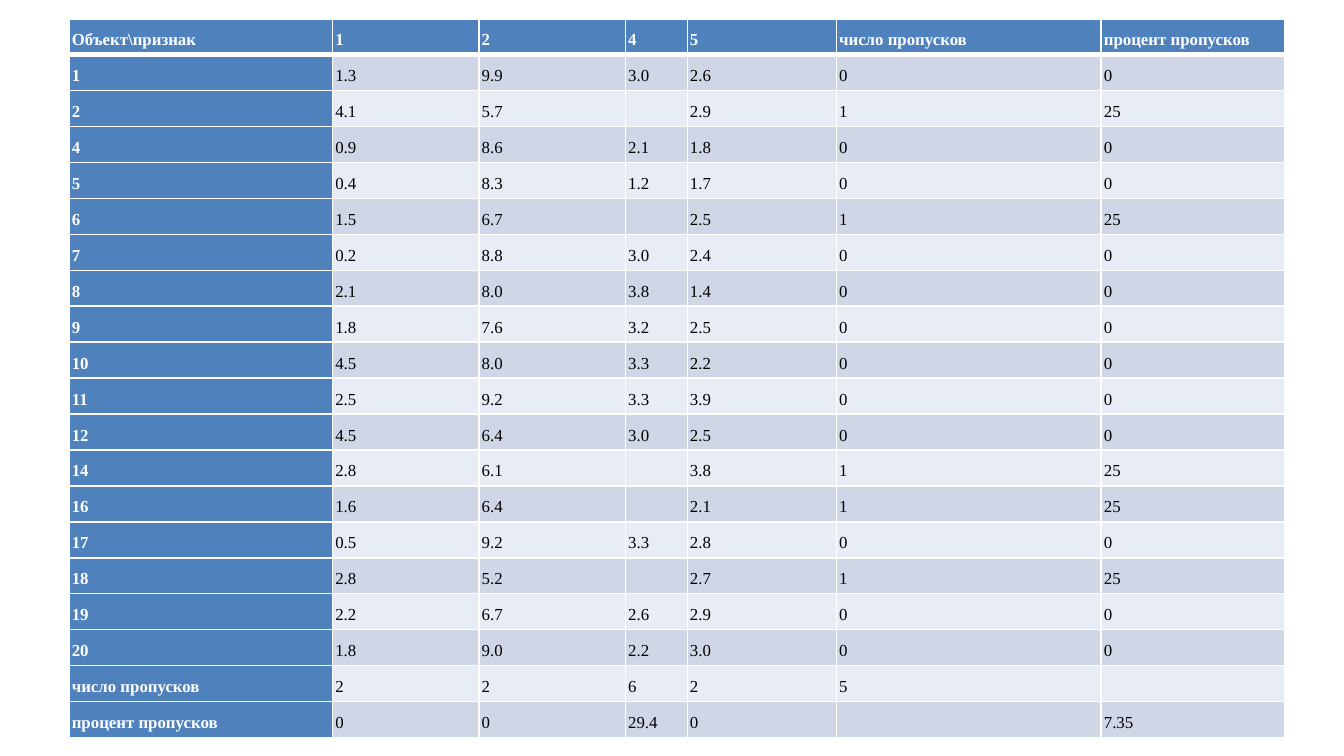
import lxml.etree
import pptx
import pptx.dml.color
import pptx.oxml.ns
import pptx.util

RGBColor = pptx.dml.color.RGBColor
BLUE = RGBColor(0x4F, 0x81, 0xBD)
DARK = RGBColor(0xCF, 0xD7, 0xE7)
PALE = RGBColor(0xE8, 0xEC, 0xF4)
WHITE = RGBColor(0xFF, 0xFF, 0xFF)
BLACK = RGBColor(0x00, 0x00, 0x00)

HEAD = ["Объект\\признак", "1", "2", "4", "5", "число пропусков", "процент пропусков"]
ITEMS = [
    ("1", "1.3", "9.9", "3.0", "2.6"),
    ("2", "4.1", "5.7", "", "2.9"),
    ("4", "0.9", "8.6", "2.1", "1.8"),
    ("5", "0.4", "8.3", "1.2", "1.7"),
    ("6", "1.5", "6.7", "", "2.5"),
    ("7", "0.2", "8.8", "3.0", "2.4"),
    ("8", "2.1", "8.0", "3.8", "1.4"),
    ("9", "1.8", "7.6", "3.2", "2.5"),
    ("10", "4.5", "8.0", "3.3", "2.2"),
    ("11", "2.5", "9.2", "3.3", "3.9"),
    ("12", "4.5", "6.4", "3.0", "2.5"),
    ("14", "2.8", "6.1", "", "3.8"),
    ("16", "1.6", "6.4", "", "2.1"),
    ("17", "0.5", "9.2", "3.3", "2.8"),
    ("18", "2.8", "5.2", "", "2.7"),
    ("19", "2.2", "6.7", "2.6", "2.9"),
    ("20", "1.8", "9.0", "2.2", "3.0"),
]
TOTALS = [
    ("число пропусков", "2", "2", "6", "2", "5", ""),
    ("процент пропусков", "0", "0", "29.4", "0", "", "7.35"),
]
SPANS = [19.6, 10.9, 10.9, 4.6, 11.1, 19.7, 13.65]


class Deck:
    unit = pptx.util.Inches(0.1)
    font = {"name": "Times New Roman", "size": pptx.util.Pt(9)}
    inset = {"margin_" + side: pptx.util.Inches(0.02)
             for side in ("left", "top", "right", "bottom")}

    def __init__(self):
        self.show = pptx.Presentation()
        self.show.slide_width = self.grid(100)
        self.show.slide_height = self.grid(56.25)
        self.slide = self.show.slides.add_slide(self.show.slide_layouts[6])

    def grid(self, count):
        return round(count * self.unit)

    def apply(self, target, values):
        for name, value in values.items():
            setattr(target, name, value)

    def table(self, left, top, spans, tall, rows):
        shape = self.slide.shapes.add_table(
            len(rows), len(spans), self.grid(left), self.grid(top),
            self.grid(sum(spans)), self.grid(tall))
        table = shape.table
        table.first_col = True
        for col, span in zip(table.columns, spans):
            col.width = self.grid(span)
        for r, row in enumerate(rows):
            for c, text in enumerate(row):
                self.cell(table.cell(r, c), text, r, c)

    def cell(self, cell, text, r, c):
        label = r == 0 or c == 0
        self.apply(cell, self.inset)
        cell.fill.solid()
        cell.fill.fore_color.rgb = BLUE if label else DARK if r % 2 else PALE
        para = cell.text_frame.paragraphs[0]
        if text:
            para.line_spacing = 1.5
            run = para.add_run()
            run.text = text
            self.apply(run.font, {**self.font, "bold": label})
            run.font.color.rgb = WHITE if label else BLACK
        else:
            lxml.etree.SubElement(
                para._p, pptx.oxml.ns.qn("a:endParaRPr"), sz="900")
        self.edge(cell, {"L": 1, "R": 1, "T": 3 if r == 1 else 1,
                         "B": 3 if r == 0 else 1})

    def edge(self, cell, widths):
        name = pptx.oxml.ns.qn
        props = cell._tc.get_or_add_tcPr()
        for place, (side, width) in enumerate(widths.items()):
            line = lxml.etree.Element(
                name("a:ln" + side), w=str(pptx.util.Pt(width)))
            fill = lxml.etree.SubElement(line, name("a:solidFill"))
            lxml.etree.SubElement(fill, name("a:srgbClr"), val=str(WHITE))
            props.insert(place, line)


def main():
    rows = [HEAD]
    for item in ITEMS:
        gaps = item.count("")
        rows.append([*item, str(gaps), str(gaps * 100 // (len(item) - 1))])
    rows += TOTALS
    deck = Deck()
    deck.table(5.15, 1.4, SPANS, 53.5, rows)
    deck.show.save("out.pptx")


if __name__ == "__main__":
    main()
